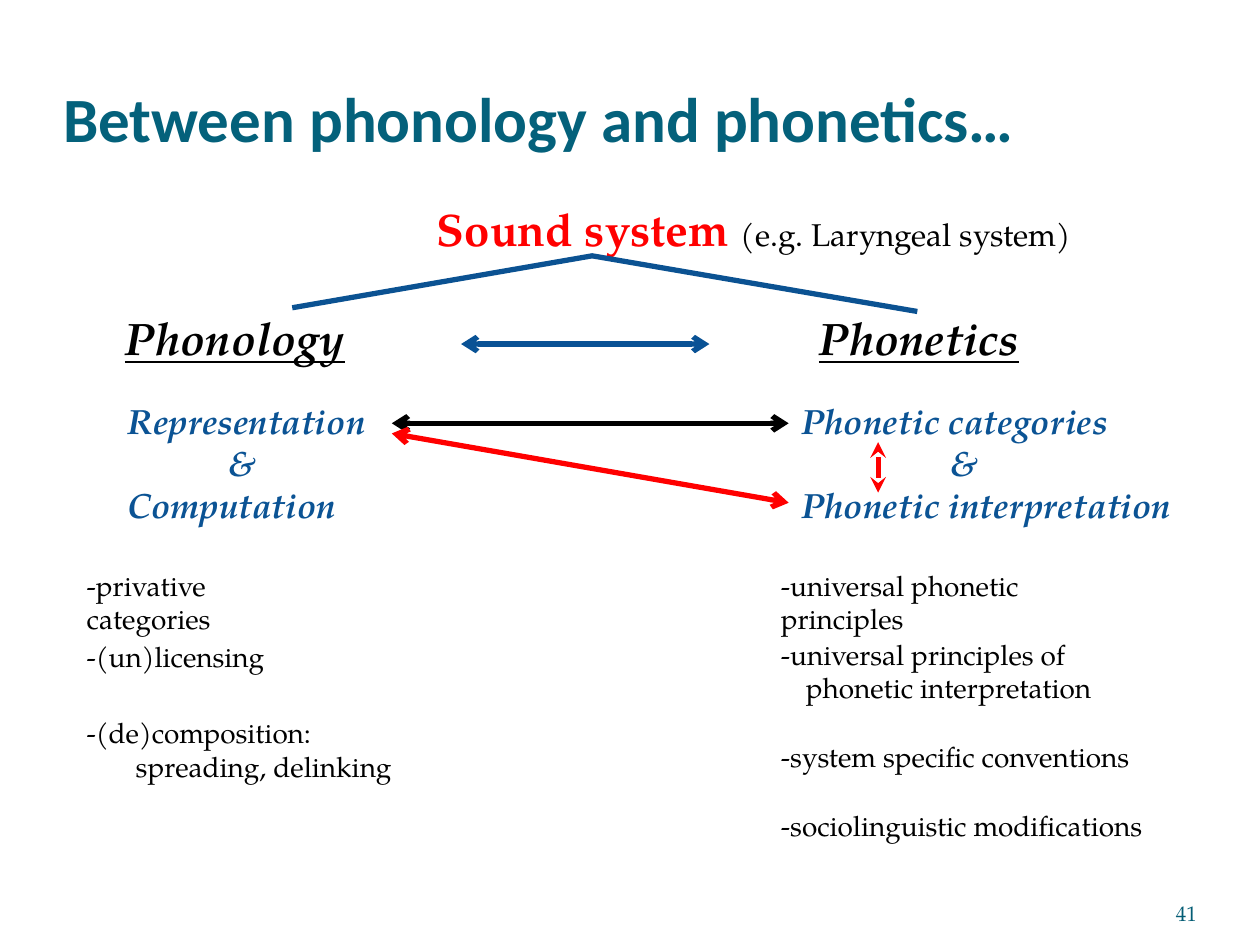
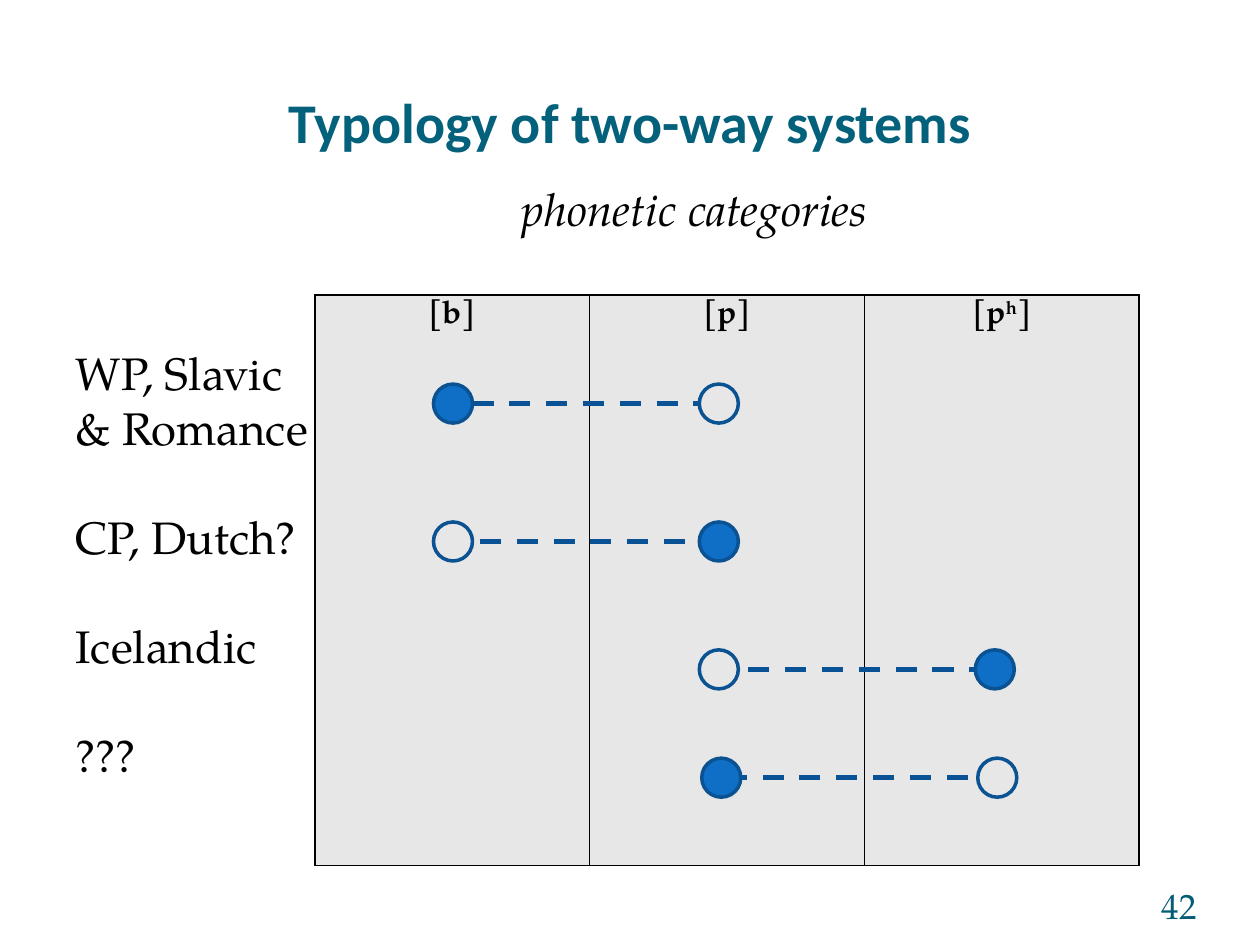
"""Two slides on phonology, phonetics and two-way laryngeal systems."""
from dataclasses import dataclass, field

from lxml.etree import SubElement
from pptx import Presentation
from pptx.dml.color import RGBColor
from pptx.enum.dml import MSO_LINE
from pptx.enum.shapes import MSO_CONNECTOR, MSO_SHAPE
from pptx.enum.text import MSO_ANCHOR, MSO_AUTO_SIZE, PP_ALIGN
from pptx.oxml.ns import qn
from pptx.util import Pt

COLORS = {
    "title": "04617B", "number": "045D75", "text": "000000", "accent": "FF0000",
    "heading": "0B5394", "outline": "0B5292", "link": "095295",
    "dot": "0F6FC6", "cell": "E7E7E7",
}
TITLE_FONT, TEXT_FONT = "Calibri", "TeX Gyre Pagella"
DOT_SIZE = 22.3
COLUMN_WIDTH, TABLE_HEIGHT = 157, 326


@dataclass
class Piece:
    """A stretch of text with its own format."""
    text: str
    style: dict = field(default_factory=dict)


@dataclass
class Line:
    """One paragraph: its pieces, left indent and gap above."""
    pieces: list
    indent: float = 0
    before: float = 0


@dataclass
class Note:
    """A text block at a place on the slide."""
    left: float
    top: float
    width: float
    lines: list


@dataclass
class Arrow:
    """A two-headed arrow between two points."""
    start: tuple
    end: tuple
    color: str
    head: str = "arrow"


@dataclass
class Contrast:
    """A marked and an unmarked dot joined by a dashed link."""
    middle: float
    filled: float
    hollow: float
    link_start: float
    link_end: float


def plain(text: str, indent: float = 0, before: float = 0) -> Line:
    """Return a paragraph of one piece."""
    return Line([Piece(text)], indent, before)


def rgb(name: str) -> RGBColor:
    """Look up a named colour."""
    return RGBColor.from_string(COLORS[name])


def add_text(paragraph, text: str, *, size: float, color: str = "text",
             font: str = TEXT_FONT, bold: bool = False, italic: bool = False,
             underline: bool = False, raised: bool = False) -> None:
    """Append formatted text to a paragraph."""
    run = paragraph.add_run()
    run.text = text
    run.font.name, run.font.size = font, Pt(size)
    run.font.bold, run.font.italic, run.font.underline = bold, italic, underline
    run.font.color.rgb = rgb(color)
    if raised:
        run.font._element.set("baseline", "30000")


def fill_frame(frame, lines: list, align=PP_ALIGN.LEFT, anchor=MSO_ANCHOR.TOP,
               margins: tuple = (7.2, 3.6, 7.2, 3.6), **style) -> None:
    """Write paragraphs into a text frame."""
    frame.word_wrap, frame.auto_size = True, MSO_AUTO_SIZE.NONE
    frame.vertical_anchor = anchor
    (frame.margin_left, frame.margin_top,
     frame.margin_right, frame.margin_bottom) = map(Pt, margins)
    for index, line in enumerate(lines):
        paragraph = frame.add_paragraph() if index else frame.paragraphs[0]
        paragraph.alignment = align
        paragraph.space_before = Pt(line.before)
        properties = paragraph._p.get_or_add_pPr()
        properties.set("marL", str(Pt(line.indent)))
        properties.set("indent", "0")
        SubElement(properties, qn("a:buNone"))
        for piece in line.pieces:
            add_text(paragraph, piece.text, **{**style, **piece.style})


def place(shape, left: float, top: float, width: float, height: float) -> None:
    """Move and size a shape."""
    shape.left, shape.top, shape.width, shape.height = map(Pt, (left, top, width, height))


def add_note(slide, note: Note, height: float = 30, **style) -> None:
    """Add a text box."""
    box = slide.shapes.add_textbox(Pt(note.left), Pt(note.top), Pt(note.width), Pt(height))
    fill_frame(box.text_frame, note.lines, **style)


def start_slide(deck, title: str, title_size: float, title_align, body_top: float,
                body_height: float, body: list, number: str, number_size: float):
    """Add a slide with title, body and page number."""
    slide = deck.slides.add_slide(deck.slide_layouts[1])
    heading, content = slide.placeholders
    place(heading, 36, 37.4, 648, 51.1)
    fill_frame(heading.text_frame, [plain(title)], title_align, MSO_ANCHOR.BOTTOM,
               (0, 3.6, 0, 0), size=title_size, font=TITLE_FONT, color="title", bold=True)
    place(content, 36, body_top, 648, body_height)
    fill_frame(content.text_frame, body, size=26)
    add_note(slide, Note(624.2, 500.4, 59.8, [plain(number)]), 28.8,
             align=PP_ALIGN.RIGHT, anchor=MSO_ANCHOR.BOTTOM, margins=(0, 0, 0, 0),
             size=number_size, color="number")
    return slide


def add_line(slide, start: tuple, end: tuple, color: str):
    """Add a shadowless straight line."""
    line = slide.shapes.add_connector(MSO_CONNECTOR.STRAIGHT, *map(Pt, start + end))
    line.line.color.rgb, line.line.width = rgb(color), Pt(3)
    SubElement(line._element.spPr, qn("a:effectLst"))
    return line


def add_arrow(slide, arrow: Arrow) -> None:
    """Add a line with a head at both ends."""
    line = add_line(slide, arrow.start, arrow.end, arrow.color)
    outline = line.line._get_or_add_ln()
    for end in ("a:headEnd", "a:tailEnd"):
        SubElement(outline, qn(end), type=arrow.head)


def add_branches(slide) -> None:
    """Draw the two branches below the sound system."""
    builder = slide.shapes.build_freeform(Pt(167), Pt(175.9))
    builder.add_line_segments([(Pt(338.4), Pt(146.2)), (Pt(524.2), Pt(178))], close=False)
    branches = builder.convert_to_shape()
    branches.shadow.inherit = False
    branches.fill.background()
    branches.line.color.rgb, branches.line.width = rgb("outline"), Pt(3)


def add_dot(slide, left: float, middle: float, filled: bool) -> None:
    """Draw one category dot."""
    dot = slide.shapes.add_shape(MSO_SHAPE.OVAL, Pt(left), Pt(middle - DOT_SIZE / 2),
                                 Pt(DOT_SIZE), Pt(DOT_SIZE))
    dot.shadow.inherit = False
    dot.line.color.rgb, dot.line.width = rgb("outline"), Pt(2)
    if filled:
        dot.fill.solid()
        dot.fill.fore_color.rgb = rgb("dot")
    else:
        dot.fill.background()


def add_contrast(slide, contrast: Contrast) -> None:
    """Draw a pair of dots and the link between them."""
    add_dot(slide, contrast.filled, contrast.middle, True)
    add_dot(slide, contrast.hollow, contrast.middle, False)
    link = add_line(slide, (contrast.link_start, contrast.middle),
                    (contrast.link_end, contrast.middle), "link")
    link.line.dash_style = MSO_LINE.DASH


def add_categories(slide, categories: list) -> None:
    """Add the one-row table of phonetic categories."""
    frame = slide.shapes.add_table(1, len(categories), Pt(180), Pt(168.5),
                                   Pt(COLUMN_WIDTH * len(categories)), Pt(TABLE_HEIGHT))
    table = frame.table
    table.first_row = table.horz_banding = False
    for cell, pieces in zip(table.rows[0].cells, categories):
        properties = cell._tc.get_or_add_tcPr()
        for side in ("a:lnL", "a:lnR", "a:lnT", "a:lnB"):
            border = SubElement(properties, qn(side), w=str(Pt(1)))
            paint = SubElement(border, qn("a:solidFill"))
            SubElement(paint, qn("a:srgbClr"), val=COLORS["text"])
        cell.fill.solid()
        cell.fill.fore_color.rgb = rgb("cell")
        paragraph = cell.text_frame.paragraphs[0]
        paragraph.alignment = PP_ALIGN.CENTER
        for piece in pieces:
            add_text(paragraph, piece.text, size=18, bold=True, **piece.style)


def build_sound_system(deck) -> None:
    """Build the slide relating phonology and phonetics."""
    slanted = {"bold": True, "italic": True}
    domain = {**slanted, "underline": True}
    body = [
        Line([Piece("Sound system ", {"color": "accent", "bold": True}),
              Piece("(e.g. Laryngeal system)", {"size": 18})], indent=206.5),
        Line([Piece("Phonology", domain)], indent=28.2, before=31.2),
    ]
    slide = start_slide(deck, "Between phonology and phonetics…", 36, PP_ALIGN.LEFT,
                        111, 387, body, "41", 12)
    add_note(slide, Note(460.8, 173.6, 150, [plain("Phonetics")]), 38, size=26, **domain)
    add_branches(slide)
    headings = [
        Note(65.5, 224.6, 170, [plain("Representation"), plain("&", 57.6), plain("Computation")]),
        Note(450.7, 224.6, 244, [plain("Phonetic categories"), plain("&", 85),
                                 plain("Phonetic interpretation")]),
    ]
    for heading in headings:
        add_note(slide, heading, 80, size=20, color="heading", **slanted)
    details = [
        Note(42.5, 321.1, 153.4, [plain("-privative categories")]),
        Note(42.5, 362.2, 221, [plain("-(un)licensing")]),
        Note(42.5, 405.4, 221, [plain("-(de)composition:"), plain("spreading, delinking", 28)]),
        Note(439.2, 321.1, 221, [plain("-universal phonetic principles")]),
        Note(439.2, 360.7, 221, [plain("-universal principles of"),
                                 plain("phonetic interpretation", 14.2)]),
        Note(439.2, 419, 221, [plain("-system specific conventions")]),
        Note(439.2, 458.6, 221, [plain("-sociolinguistic modifications")]),
    ]
    for detail in details:
        add_note(slide, detail, size=16)
    arrows = [
        Arrow((263.5, 196.6), (405.4, 196.6), "link"),
        Arrow((223.9, 241.9), (450.7, 241.9), "text"),
        Arrow((223.9, 247.7), (450.7, 287.3), "accent"),
        Arrow((501.8, 281.5), (501.8, 252.7), "accent", "stealth"),
    ]
    for arrow in arrows:
        add_arrow(slide, arrow)


def build_typology(deck) -> None:
    """Build the slide on two-way systems."""
    body = [
        Line([Piece("phonetic categories", {"italic": True})], indent=254.9),
        plain("WP, Slavic", before=62.4),
        plain("& Romance"),
        *(plain(system, before=31.2) for system in ("CP, Dutch?", "Icelandic", "???")),
    ]
    slide = start_slide(deck, "Typology of two-way systems", 32, PP_ALIGN.CENTER,
                        100.1, 402.5, body, "42", 20)
    add_categories(slide, [
        [Piece("[b]")], [Piece("[p]")],
        [Piece("[p"), Piece("h", {"raised": True}), Piece("]")],
    ])
    contrasts = [
        Contrast(230.6, 247.7, 399.6, 270, 399.6),
        Contrast(309.4, 399.6, 247.7, 274.3, 399.6),
        Contrast(382.5, 557.3, 399.6, 427.7, 557.3),
        Contrast(444.4, 401, 558.7, 553, 423.4),
    ]
    for contrast in contrasts:
        add_contrast(slide, contrast)


def main() -> None:
    """Build and save the deck."""
    deck = Presentation()
    deck.slide_width, deck.slide_height = Pt(720), Pt(540)
    build_sound_system(deck)
    build_typology(deck)
    deck.save("out.pptx")


if __name__ == "__main__":
    main()
